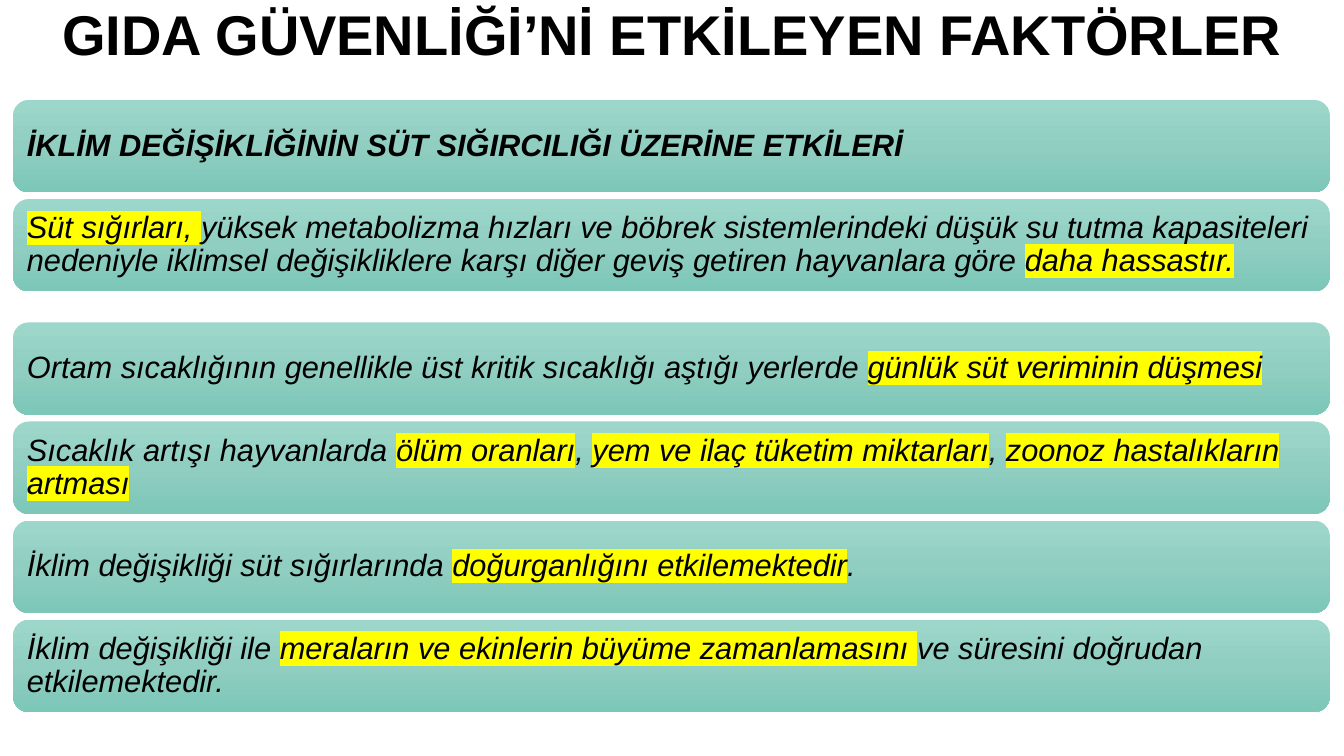
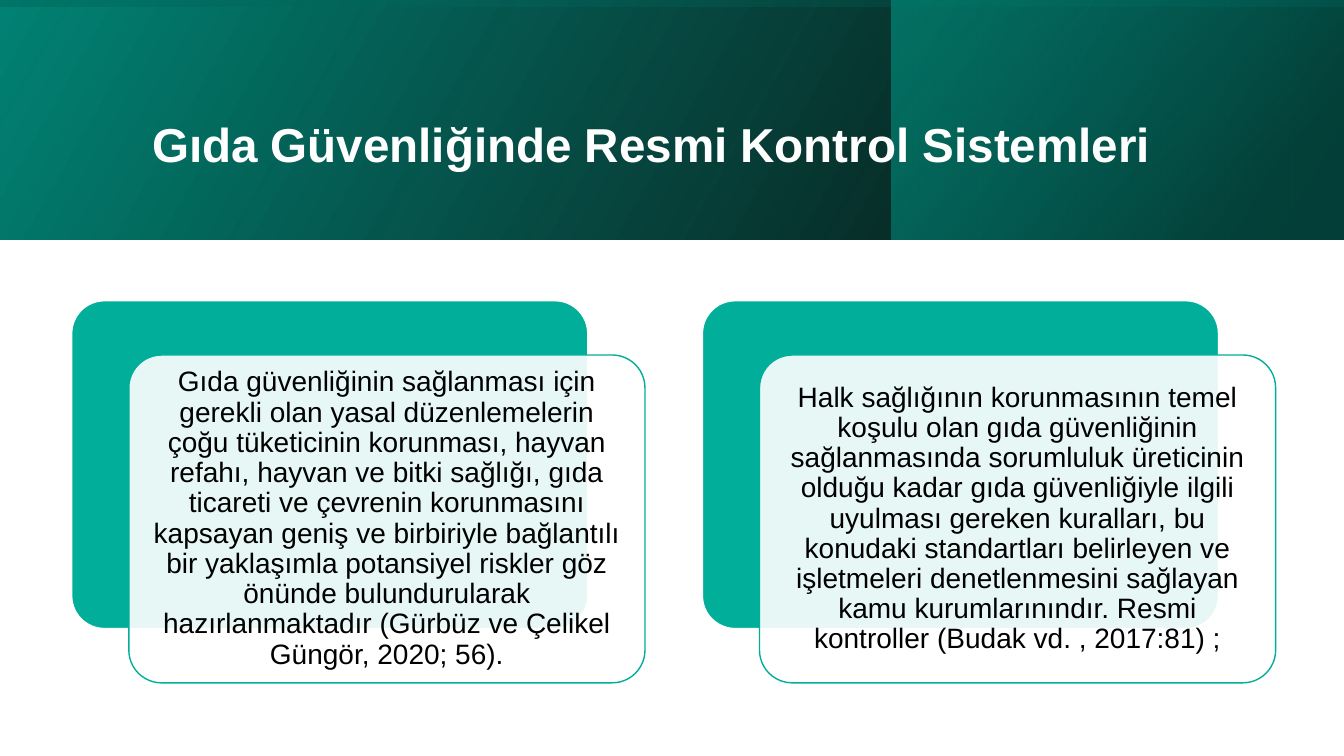
from lxml import etree
from pptx import Presentation
from pptx.dml.color import RGBColor
from pptx.enum import shapes, text
from pptx.oxml import ns
from pptx.util import Pt

COLORS = {
    "ink": "000000", "paper": "FFFFFF", "mark": "FFFF00",
    "mint": "9DD7CB", "sage": "90CEC1", "sea": "7CC7B8",
    "teal": "00AE9A", "deep": "008274", "pine": "00574D",
}
FONT = "Arial"
WIDTH, HEIGHT = 960, 540
KIND = shapes.MSO_SHAPE
ALIGN = text.PP_ALIGN
ANCHOR = text.MSO_ANCHOR

FACTORS = [
    "İKLİM DEĞİŞİKLİĞİNİN SÜT SIĞIRCILIĞI ÜZERİNE ETKİLERİ",
    "*Süt sığırları, *yüksek metabolizma hızları ve böbrek sistemlerindeki düşük su tutma "
    "kapasiteleri nedeniyle iklimsel değişikliklere karşı diğer geviş getiren hayvanlara göre "
    "*daha hassastır.*",
    "Ortam sıcaklığının genellikle üst kritik sıcaklığı aştığı yerlerde "
    "*günlük süt veriminin düşmesi*",
    "Sıcaklık artışı hayvanlarda *ölüm oranları*, *yem ve ilaç tüketim miktarları*, "
    "*zoonoz hastalıkların artması*",
    "İklim değişikliği süt sığırlarında *doğurganlığını etkilemektedir*.",
    "İklim değişikliği ile *meraların ve ekinlerin büyüme zamanlamasını *ve süresini "
    "doğrudan etkilemektedir.",
]
CONTROLS = [
    "Gıda güvenliğinin sağlanması için gerekli olan yasal düzenlemelerin çoğu tüketicinin "
    "korunması, hayvan refahı, hayvan ve bitki sağlığı, gıda ticareti ve çevrenin korunmasını "
    "kapsayan geniş ve birbiriyle bağlantılı bir yaklaşımla potansiyel riskler göz önünde "
    "bulundurularak hazırlanmaktadır (Gürbüz ve Çelikel Güngör, 2020; 56).",
    "Halk sağlığının korunmasının temel koşulu olan gıda güvenliğinin sağlanmasında sorumluluk "
    "üreticinin olduğu kadar gıda güvenliğiyle ilgili uyulması gereken kuralları, bu konudaki "
    "standartları belirleyen ve işletmeleri denetlenmesini sağlayan kamu kurumlarınındır. "
    "Resmi kontroller (Budak vd. , 2017:81) ;",
]


def rgb(name):
    return RGBColor.from_string(COLORS[name])


def add_node(parent, tag, **attrs):
    node = etree.SubElement(parent, ns.qn(tag))
    for key, value in attrs.items():
        node.set(key, str(value))
    return node


def add_color(parent, name, alpha=100):
    color = add_node(parent, "a:srgbClr", val=COLORS[name])
    if alpha < 100:
        add_node(color, "a:alpha", val=alpha * 1000)


def add_box(slide, kind, box, line=None):
    shape = slide.shapes.add_shape(kind, *map(Pt, box))
    shape.shadow.inherit = False
    if line:
        shape.line.color.rgb = rgb(line)
        shape.line.width = Pt(1)
    else:
        shape.line.fill.background()
    return shape


def fill_solid(shape, name, alpha=100):
    shape.fill.solid()
    shape.fill.fore_color.rgb = rgb(name)
    if alpha < 100:
        color = shape.element.spPr.find(ns.qn("a:solidFill"))[0]
        add_node(color, "a:alpha", val=alpha * 1000)


def fill_fade(shape, stops, angle):
    shape.fill.background()
    blank = shape.element.spPr.find(ns.qn("a:noFill"))
    fade = etree.Element(ns.qn("a:gradFill"), rotWithShape="1")
    blank.getparent().replace(blank, fade)
    listing = add_node(fade, "a:gsLst")
    for place, name, alpha in stops:
        add_color(add_node(listing, "a:gs", pos=place * 1000), name, alpha)
    add_node(fade, "a:lin", ang=angle * 60000, scaled=0)


def set_text(shape, words, size, color="ink", bold=False, italic=False,
             align=ALIGN.LEFT, anchor=ANCHOR.MIDDLE, inset=0, spacing=0.9):
    frame = shape.text_frame
    frame.word_wrap = True
    frame.vertical_anchor = anchor
    frame.margin_left = frame.margin_right = Pt(inset)
    frame.margin_top = frame.margin_bottom = Pt(inset)
    para = frame.paragraphs[0]
    para.alignment = align
    para.line_spacing = spacing
    for index, part in enumerate(words.split("*")):
        if not part:
            continue
        run = para.add_run()
        run.text = part
        font = run.font
        font.name, font.size = FONT, Pt(size)
        font.bold, font.italic = bold, italic
        font.color.rgb = rgb(color)
        if index % 2:
            mark = etree.Element(ns.qn("a:highlight"))
            add_color(mark, "mark")
            run.font._element.find(ns.qn("a:solidFill")).addnext(mark)


def add_title(slide, words, box, size, **style):
    label = slide.shapes.add_textbox(*map(Pt, box))
    set_text(label, words, size, bold=True, **style)


def add_row(slide, words, box, bold):
    row = add_box(slide, KIND.ROUNDED_RECTANGLE, box)
    fill_fade(row, [(0, "mint", 100), (50, "sage", 100), (100, "sea", 100)], 90)
    set_text(row, words, 22, bold=bold, italic=True, inset=6.6)


def add_rows(slide, box):
    left, top, width, height = box
    tall, pitch, split = 66, 70.8, 17.3
    for index, words in enumerate(FACTORS):
        y = top + index * pitch + (split if index > 1 else 0)
        add_row(slide, words, (left, y, width, tall), index == 0)


def add_band(slide, box):
    left, top, width, height = box
    side = 323
    turned = (left + (width - height) / 2, top + (height - width) / 2, height, width)
    layers = [
        (box, 0, [(0, "ink", 96), (100, "deep", 100)], 330),
        ((left + width - side, top, side, height), 0,
         [(19, "pine", 68), (100, "teal", 48)], 320),
        (turned, 270, [(23, "deep", 16), (99, "ink", 45)], 350),
    ]
    for area, turn, stops, angle in layers:
        layer = add_box(slide, KIND.RECTANGLE, area)
        layer.rotation = turn
        layer.element.spPr.xfrm.set("flipH", "1")
        fill_fade(layer, stops, angle)


def add_card(slide, words, box):
    left, top, width, height = box
    dx, dy = 40.8, 38.8
    size = (width - dx, height - dy)
    back = add_box(slide, KIND.ROUNDED_RECTANGLE, (left, top, *size), "paper")
    front = add_box(slide, KIND.ROUNDED_RECTANGLE, (left + dx, top + dy, *size), "teal")
    for shape in (back, front):
        shape.adjustments[0] = 0.1
    fill_solid(back, "teal")
    fill_solid(front, "paper", 90)
    set_text(front, words, 20, align=ALIGN.CENTER, inset=5.8)


def add_cards(slide, box):
    left, top, width, height = box
    gap = 41
    wide = (width - gap) / 2
    for index, words in enumerate(CONTROLS):
        add_card(slide, words, (left + index * (wide + gap), top, wide, height))


def build_factors(slide):
    add_title(slide, "GIDA GÜVENLİĞİ’Nİ ETKİLEYEN FAKTÖRLER", (10, 0, 940, 71), 40,
              align=ALIGN.CENTER, anchor=ANCHOR.TOP, spacing=1.0)
    add_rows(slide, (9.4, 71.4, 940.4, 437))


def build_controls(slide):
    add_band(slide, (0, 0, WIDTH, 171))
    add_title(slide, "Gıda Güvenliğinde Resmi Kontrol Sistemleri", (108.7, 27.4, 765, 124),
              34, color="paper", spacing=Pt(67.5))
    add_cards(slide, (51.2, 214.8, 860, 273))


def main():
    deck = Presentation()
    deck.slide_width, deck.slide_height = Pt(WIDTH), Pt(HEIGHT)
    for build in (build_factors, build_controls):
        build(deck.slides.add_slide(deck.slide_layouts[6]))
    deck.save("out.pptx")


if __name__ == "__main__":
    main()
